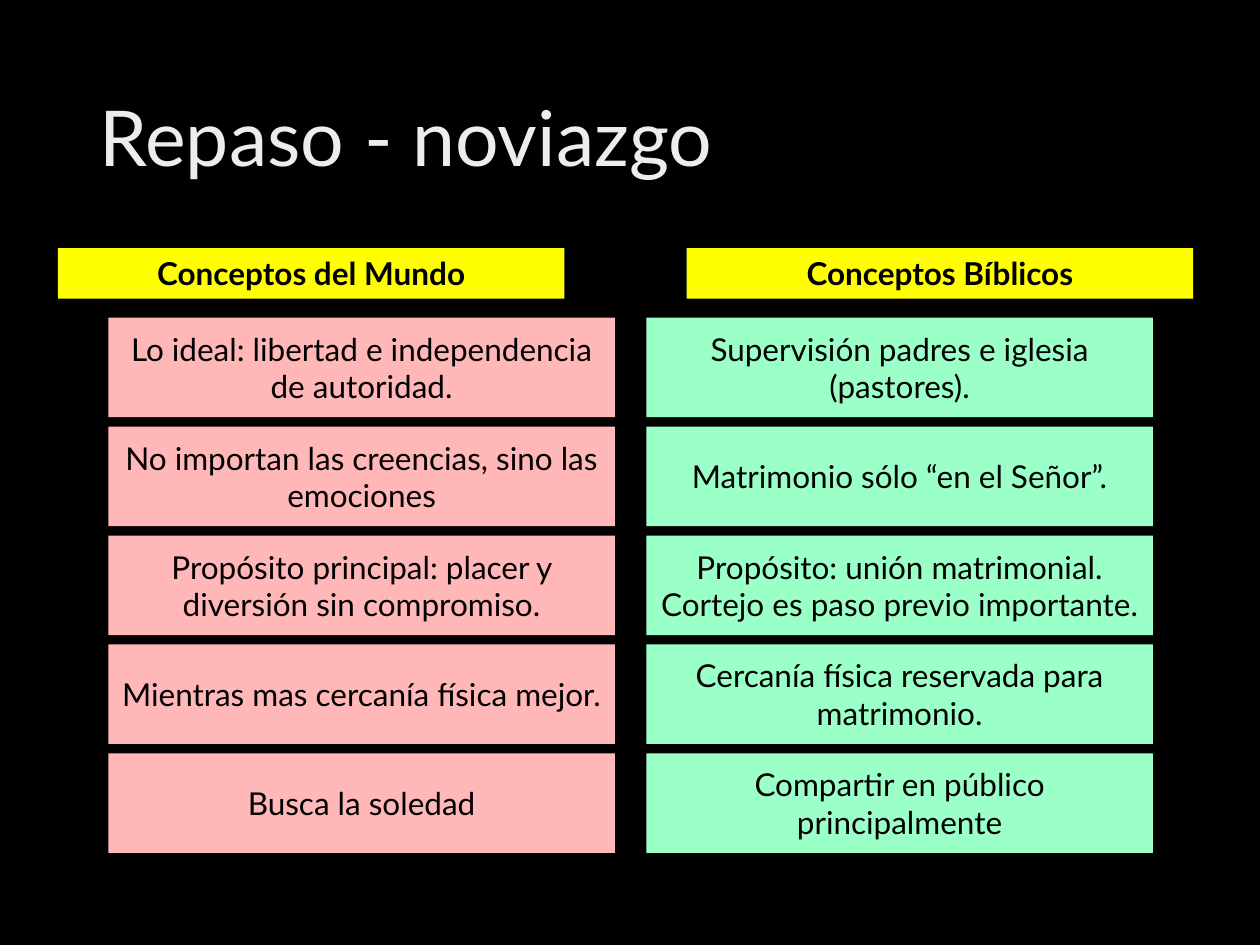
"""Build the slide that compares two views of courtship."""
from pptx import Presentation
from pptx.dml.color import RGBColor
from pptx.enum.shapes import MSO_SHAPE
from pptx.enum.text import MSO_ANCHOR, PP_ALIGN
from pptx.util import Inches, Pt

COLORS = {
    "background": "000000",
    "title": "EDEDED",
    "text": "000000",
    "header": "FFFF00",
    "world": "FFB7B7",
    "biblical": "9BFFC8",
}
BOX_WIDTH = 4.02
HEADER_TOP, HEADER_HEIGHT = 1.97, 0.4
FIRST_TOP, LAST_TOP, BOX_HEIGHT = 2.52, 5.98, 0.79

COLUMNS = [
    {
        "header": "Conceptos del Mundo",
        "header_left": 0.46,
        "left": 0.86,
        "color": "world",
        "concepts": [
            "Lo ideal: libertad e independencia de autoridad.",
            "No importan las creencias, sino las emociones",
            "Propósito principal: placer y diversión sin compromiso.",
            "Mientras mas cercanía física mejor.",
            "Busca la soledad",
        ],
    },
    {
        "header": "Conceptos Bíblicos",
        "header_left": 5.45,
        "left": 5.13,
        "color": "biblical",
        "concepts": [
            "Supervisión padres e iglesia (pastores).",
            "Matrimonio sólo “en el Señor”.",
            "Propósito: unión matrimonial. Cortejo es paso previo importante.",
            "Cercanía física reservada para matrimonio.",
            "Compartir en público principalmente",
        ],
    },
]


def rgb(name):
    return RGBColor.from_string(COLORS[name])


def set_attributes(target, values):
    for name, value in values.items():
        setattr(target, name, value)


def write_text(shape, text, color, paragraph_format, font_format):
    frame = shape.text_frame
    set_attributes(frame, {"word_wrap": True, "vertical_anchor": MSO_ANCHOR.MIDDLE})
    paragraph = frame.paragraphs[0]
    set_attributes(paragraph, paragraph_format)
    run = paragraph.add_run()
    run.text = text
    set_attributes(run.font, {"name": "Lato", **font_format})
    run.font.color.rgb = rgb(color)


def add_title(slide, text):
    title = slide.shapes.title
    set_attributes(title, {
        "left": Inches(0.69),
        "top": Inches(0.4),
        "width": Inches(8.62),
        "height": Inches(1.45),
    })
    write_text(title, text, "title",
               {"alignment": PP_ALIGN.LEFT, "line_spacing": 0.9}, {"size": Pt(44)})


def add_box(slide, text, left, top, height, color, bold=False):
    box = slide.shapes.add_shape(
        MSO_SHAPE.RECTANGLE, Inches(left), Inches(top), Inches(BOX_WIDTH), Inches(height))
    box.shadow.inherit = False
    box.fill.solid()
    box.fill.fore_color.rgb = rgb(color)
    box.line.fill.background()
    write_text(box, text, "text",
               {"alignment": PP_ALIGN.CENTER}, {"size": Pt(18), "bold": bold})


def add_column(slide, column):
    concepts = column["concepts"]
    pitch = (LAST_TOP - FIRST_TOP) / (len(concepts) - 1)
    for row, concept in enumerate(concepts):
        add_box(slide, concept, column["left"], FIRST_TOP + row * pitch,
                BOX_HEIGHT, column["color"])
    add_box(slide, column["header"], column["header_left"], HEADER_TOP,
            HEADER_HEIGHT, "header", bold=True)


def main():
    presentation = Presentation()
    set_attributes(presentation, {"slide_width": Inches(10), "slide_height": Inches(7.5)})
    slide = presentation.slides.add_slide(presentation.slide_layouts[5])
    slide.background.fill.solid()
    slide.background.fill.fore_color.rgb = rgb("background")
    add_title(slide, "Repaso - noviazgo")
    for column in COLUMNS:
        add_column(slide, column)
    presentation.save("out.pptx")


if __name__ == "__main__":
    main()
